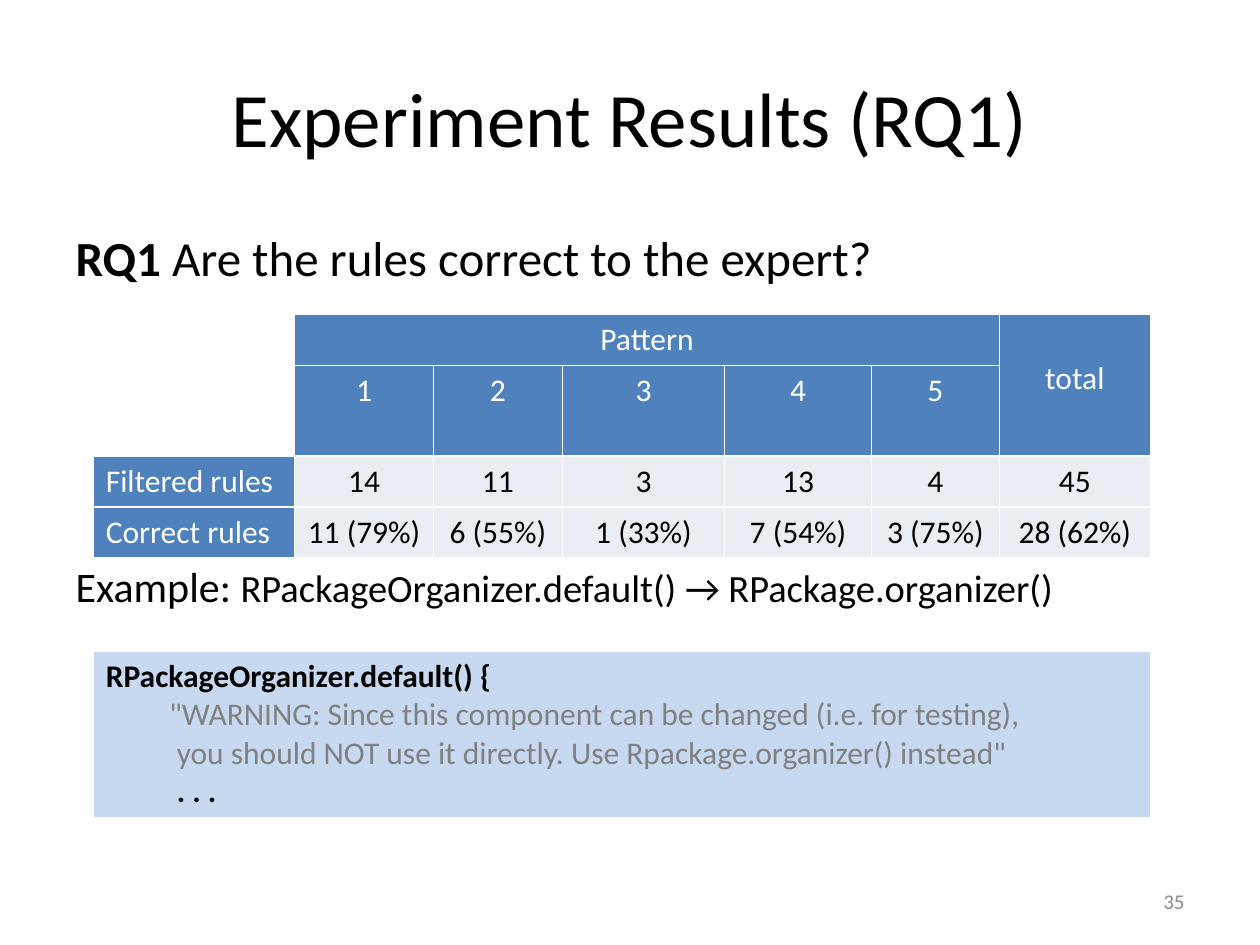
from dataclasses import dataclass

from lxml import etree
from pptx import Presentation
from pptx.dml.color import RGBColor
from pptx.enum.text import MSO_ANCHOR, PP_ALIGN
from pptx.oxml.ns import qn
from pptx.util import Cm, Pt

LEFT, CENTER, RIGHT = PP_ALIGN.LEFT, PP_ALIGN.CENTER, PP_ALIGN.RIGHT
MIDDLE = MSO_ANCHOR.MIDDLE
FONT = "Calibri"
COLORS = {
    "black": "000000",
    "white": "FFFFFF",
    "header": "4F81BD",
    "data": "E9EDF4",
    "code": "C6D9F1",
    "comment": "808080",
    "number": "8C8C8C",
}


@dataclass
class Run:
    text: str
    size: float = 18
    color: str = "black"
    bold: bool = False


@dataclass
class CodeLine:
    run: Run
    indent: float = 0  # cm


def rgb(name: str) -> RGBColor:
    return RGBColor.from_string(COLORS[name])


def add_runs(p, runs: list[Run], align=LEFT) -> None:
    p.alignment = align
    for run in runs:
        r = p.add_run()
        r.text = run.text
        r.font.name, r.font.size, r.font.bold = FONT, Pt(run.size), run.bold
        r.font.color.rgb = rgb(run.color)


def set_indent(p, cm: float) -> None:
    pPr = p._p.get_or_add_pPr()
    pPr.set("marL", str(Cm(cm)))
    pPr.set("indent", "0")


def place(sp, left: float, top: float, width: float, height: float) -> None:
    sp.left, sp.top, sp.width, sp.height = map(Cm, (left, top, width, height))


def style_cell(cell, fill: str | None) -> None:
    tcPr = cell._tc.get_or_add_tcPr()
    for side in ("a:lnL", "a:lnR", "a:lnT", "a:lnB"):
        ln = etree.SubElement(tcPr, qn(side), w=str(Pt(1)))
        solid = etree.SubElement(ln, qn("a:solidFill"))
        etree.SubElement(solid, qn("a:srgbClr"), val=COLORS["white"])
    if fill:
        cell.fill.solid()
        cell.fill.fore_color.rgb = rgb(fill)
    else:
        cell.fill.background()


def add_table(s, left: float, top: float, widths: list[float], heights: list[float]):
    table = s.shapes.add_table(
        len(heights), len(widths), Cm(left), Cm(top), Cm(sum(widths)), Cm(sum(heights))
    ).table
    table.first_row = table.horz_banding = False
    for column, width in zip(table.columns, widths):
        column.width = Cm(width)
    for row, height in zip(table.rows, heights):
        row.height = Cm(height)
    return table


prs = Presentation()
prs.slide_width, prs.slide_height = Cm(25.4), Cm(19.05)
s = prs.slides.add_slide(prs.slide_layouts[1])

# Title
title = s.shapes.title
place(title, 1.27, 0.76, 22.86, 3.18)
title.text_frame.vertical_anchor = MIDDLE
add_runs(title.text_frame.paragraphs[0], [Run("Experiment Results (RQ1)", 44)], CENTER)

# Question above the results, example below them
body = s.placeholders[1]
place(body, 1.27, 4.45, 22.86, 12.57)
tf = body.text_frame
question, example = tf.paragraphs[0], tf.add_paragraph()
add_runs(question, [
    Run("RQ1", 28, bold=True),
    Run(" Are the rules correct to the expert?", 28),
])
add_runs(example, [
    Run("Example: ", 24),
    Run("RPackageOrganizer.default() → RPackage.organizer()", 22),
])
example.space_before = Pt(157)
for p in (question, example):
    set_indent(p, 0)
    etree.SubElement(p._p.get_or_add_pPr(), qn("a:buNone"))

# Results table
RESULTS = [
    ["", "Pattern", "", "", "", "", "total"],
    ["", "1", "2", "3", "4", "5", ""],
    ["Filtered rules", "14", "11", "3", "13", "4", "45"],
    ["Correct rules", "11 (79%)", "6 (55%)", "1 (33%)", "7 (54%)", "3 (75%)", "28 (62%)"],
]
results = add_table(
    s, 1.88, 6.34, [4.06, 2.8, 2.6, 3.27, 2.96, 2.58, 3.04], [1.02, 1.82, 1.02, 1.02]
)
for i, row in enumerate(RESULTS):
    for j, text in enumerate(row):
        is_header = i < 2 or j == 0
        is_corner = i < 2 and j == 0
        cell = results.cell(i, j)
        style_cell(cell, None if is_corner else "header" if is_header else "data")
        if text:
            run = Run(text, color="white" if is_header else "black")
            add_runs(cell.text_frame.paragraphs[0], [run], CENTER if j else LEFT)
results.cell(0, 1).merge(results.cell(0, 5))
total = results.cell(0, 6)
total.merge(results.cell(1, 6))
total.vertical_anchor = MIDDLE
total.margin_bottom = Cm(0.37)

# Code example
CODE = [
    CodeLine(Run("RPackageOrganizer.default() {", bold=True)),
    CodeLine(Run('"WARNING: Since this component can be changed (i.e. for testing),',
                 color="comment"), 1.28),
    CodeLine(Run('you should NOT use it directly. Use Rpackage.organizer() instead"',
                 color="comment"), 1.43),
    CodeLine(Run(". . .", bold=True), 1.43),
]
code_cell = add_table(s, 1.88, 13.12, [21.31], [3.3]).cell(0, 0)
style_cell(code_cell, "code")
tf = code_cell.text_frame
for i, line in enumerate(CODE):
    p = tf.add_paragraph() if i else tf.paragraphs[0]
    add_runs(p, [line.run])
    set_indent(p, line.indent)

# Slide number
number = s.shapes.add_textbox(Cm(18.2), Cm(17.66), Cm(5.93), Cm(1.01))
tf = number.text_frame
tf.word_wrap = True
tf.vertical_anchor = MIDDLE
add_runs(tf.paragraphs[0], [Run("35", 12, "number")], RIGHT)

prs.save("out.pptx")
